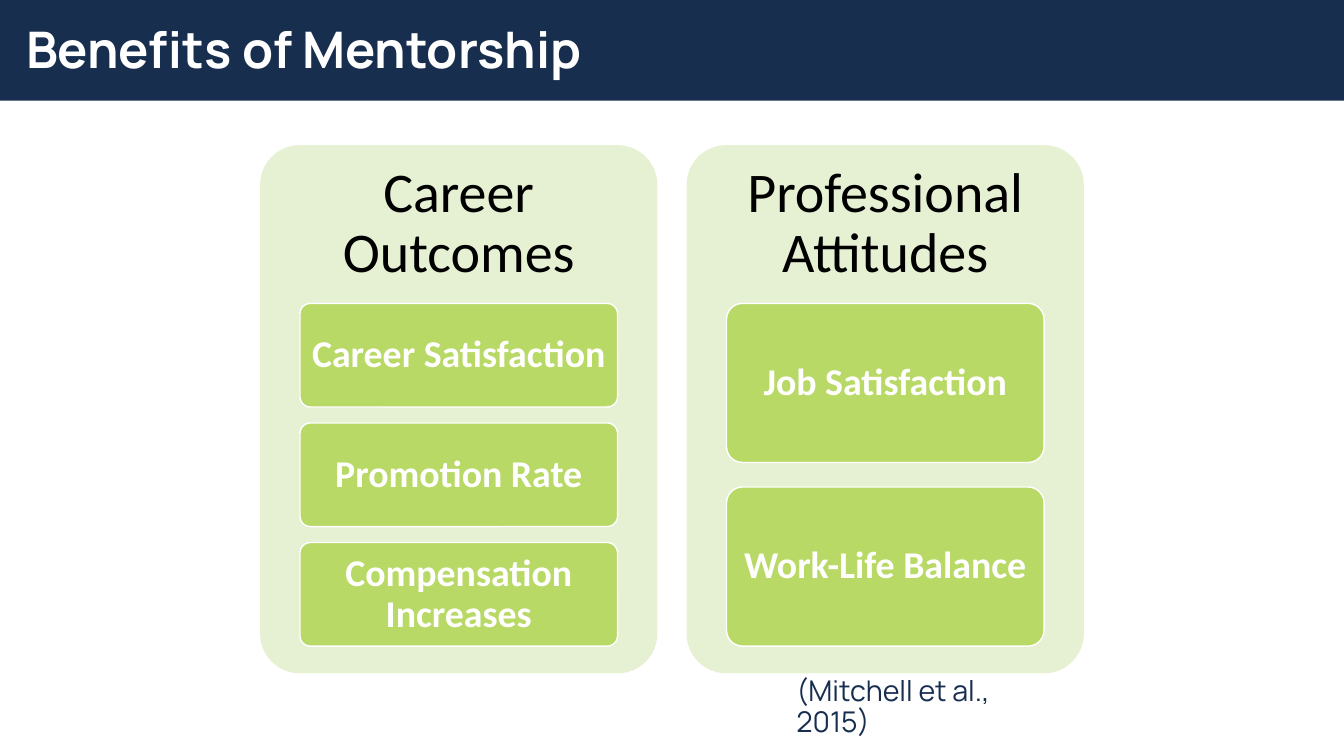
from pptx import Presentation
from pptx.dml.color import RGBColor
from pptx.enum.shapes import MSO_SHAPE
from pptx.enum.text import MSO_ANCHOR, PP_ALIGN
from pptx.util import Inches, Pt

NAVY = RGBColor(0x18, 0x2E, 0x4F)
WHITE = RGBColor(0xFF, 0xFF, 0xFF)
BLACK = RGBColor(0, 0, 0)
PALE_GREEN = RGBColor(0xE6, 0xF1, 0xD3)
GREEN = RGBColor(0xB9, 0xD9, 0x66)

PANEL_TOP, PANEL_WIDTH, PANEL_HEIGHT = 1.44, 3.94, 5.24
PANEL_LEFT, PANEL_STEP = 2.58, 4.23
HEADING_HEIGHT = 1.57
CARD_WIDTH, STACK_HEIGHT = 3.15, 3.4
GAP_RATIO = 2 / 13  # gap between cards, as a share of the card height

BENEFITS = {
    "Career Outcomes": ["Career Satisfaction", "Promotion Rate", "Compensation Increases"],
    "Professional Attitudes": ["Job Satisfaction", "Work-Life Balance"],
}


def write(frame, text, font, size, color, bold=False, align=PP_ALIGN.LEFT,
          anchor=MSO_ANCHOR.MIDDLE, insets=(0.1, 0.05)):
    """Fill a text frame with one paragraph; insets are horizontal, vertical."""
    across, down = (Inches(inset) for inset in insets)
    frame_format = {
        "word_wrap": True, "vertical_anchor": anchor,
        "margin_left": across, "margin_right": across,
        "margin_top": down, "margin_bottom": down,
    }
    for name, value in frame_format.items():
        setattr(frame, name, value)
    paragraph = frame.paragraphs[0]
    paragraph.alignment = align
    paragraph.line_spacing = 0.9
    run = paragraph.add_run()
    run.text = text
    for name, value in {"name": font, "size": Pt(size), "bold": bold}.items():
        setattr(run.font, name, value)
    run.font.color.rgb = color


def add_text(slide, box, text, *style, **options):
    frame = slide.shapes.add_textbox(*map(Inches, box)).text_frame
    write(frame, text, *style, **options)


def add_block(slide, kind, box, fill, outline=None):
    block = slide.shapes.add_shape(kind, *map(Inches, box))
    block.shadow.inherit = False
    block.fill.solid()
    block.fill.fore_color.rgb = fill
    if outline is None:
        block.line.fill.background()
    else:
        block.line.color.rgb = outline
        block.line.width = Pt(1)
    if kind == MSO_SHAPE.ROUNDED_RECTANGLE:
        block.adjustments[0] = 0.1
    return block


def add_panel(slide, left, heading, benefits):
    """Draw a headed panel whose cards share the stack height equally."""
    add_block(slide, MSO_SHAPE.ROUNDED_RECTANGLE,
              (left, PANEL_TOP, PANEL_WIDTH, PANEL_HEIGHT), PALE_GREEN)
    add_text(slide, (left, PANEL_TOP, PANEL_WIDTH, HEADING_HEIGHT), heading,
             "Calibri", 40, BLACK, align=PP_ALIGN.CENTER, insets=(0.17, 0.17))

    card_left = left + (PANEL_WIDTH - CARD_WIDTH) / 2
    count = len(benefits)
    card_height = STACK_HEIGHT / (count + (count - 1) * GAP_RATIO)
    for row, benefit in enumerate(benefits):
        top = PANEL_TOP + HEADING_HEIGHT + row * card_height * (1 + GAP_RATIO)
        card = add_block(slide, MSO_SHAPE.ROUNDED_RECTANGLE,
                         (card_left, top, CARD_WIDTH, card_height), GREEN, WHITE)
        write(card.text_frame, benefit, "Calibri", 27, WHITE, bold=True,
              align=PP_ALIGN.CENTER, insets=(0.07, 0.06))


def main():
    deck = Presentation()
    deck.slide_width, deck.slide_height = Inches(13.33), Inches(7.5)
    slide = deck.slides.add_slide(deck.slide_layouts[6])

    add_block(slide, MSO_SHAPE.RECTANGLE, (0, 0, 13.33, 1), NAVY)
    add_text(slide, (0.16, 0.09, 12.68, 0.85), "Benefits of Mentorship",
             "Manrope", 36, WHITE, bold=True)
    add_text(slide, (7.8, 6.67, 2.84, 0.59), "(Mitchell et al., 2015)",
             "Manrope", 20.4, NAVY, anchor=MSO_ANCHOR.TOP)
    for column, (heading, benefits) in enumerate(BENEFITS.items()):
        add_panel(slide, PANEL_LEFT + column * PANEL_STEP, heading, benefits)

    deck.save("out.pptx")


if __name__ == "__main__":
    main()
